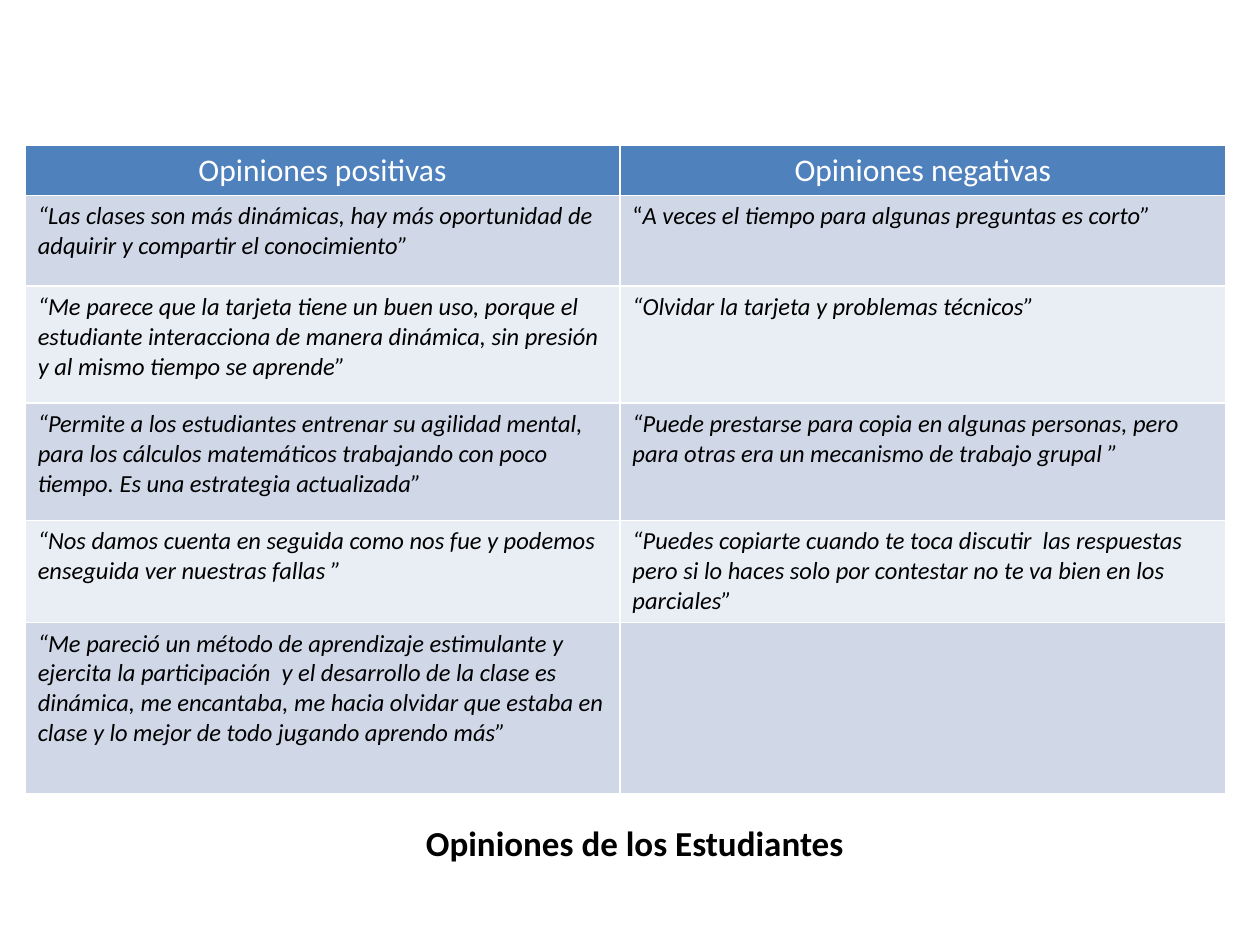
from pptx import Presentation
from pptx import util as u
from pptx.dml.color import RGBColor
from pptx.enum import text

BLACK = RGBColor(0x00, 0x00, 0x00)
WHITE = RGBColor(0xFF, 0xFF, 0xFF)
HEADER_BLUE = RGBColor(0x4F, 0x81, 0xBD)
BANDS = [RGBColor(0xE9, 0xED, 0xF4), RGBColor(0xD0, 0xD8, 0xE8)]

HEADINGS = ("Opiniones positivas", "Opiniones negativas")
OPINIONS = [
    ("“Las clases son más dinámicas, hay más oportunidad de adquirir y compartir el conocimiento”",
     "“A veces el tiempo para algunas preguntas es corto”"),
    ("“Me parece que la tarjeta tiene un buen uso, porque el estudiante interacciona de manera "
     "dinámica, sin presión y al mismo tiempo se aprende”",
     "“Olvidar la tarjeta y problemas técnicos”"),
    ("“Permite a los estudiantes entrenar su agilidad mental, para los cálculos matemáticos "
     "trabajando con poco tiempo. Es una estrategia actualizada”",
     "“Puede prestarse para copia en algunas personas, pero para otras era un mecanismo de "
     "trabajo grupal ”"),
    ("“Nos damos cuenta en seguida como nos fue y podemos enseguida ver nuestras fallas ”",
     "“Puedes copiarte cuando te toca discutir  las respuestas pero si lo haces solo por "
     "contestar no te va bien en los parciales”"),
    ("“Me pareció un método de aprendizaje estimulante y ejercita la participación  y el "
     "desarrollo de la clase es dinámica, me encantaba, me hacia olvidar que estaba en clase y "
     "lo mejor de todo jugando aprendo más”", ""),
]
COLUMN_WIDTHS = [4.72, 4.81]
ROW_HEIGHTS = [0.39, 0.72, 0.93, 0.93, 0.81, 1.36]


class OpinionSlide:
    title_format = {"size": u.Pt(20), "bold": True, "italic": False}
    heading_format = {"size": u.Pt(18), "bold": False, "italic": False}
    opinion_format = {"size": u.Pt(14), "bold": False, "italic": True}

    def __init__(self, deck):
        self.slide = deck.slides.add_slide(deck.slide_layouts[6])

    def add_words(self, paragraph, words, style, color, align):
        paragraph.alignment = align
        run = paragraph.add_run()
        run.text = words
        for name, value in {"name": "Calibri", **style}.items():
            setattr(run.font, name, value)
        run.font.color.rgb = color

    def title(self, words, *box):
        frame = self.slide.shapes.add_textbox(*map(u.Inches, box)).text_frame
        frame.word_wrap = True
        frame.vertical_anchor = text.MSO_ANCHOR.BOTTOM
        self.add_words(frame.paragraphs[0], words, self.title_format, BLACK,
                       text.PP_ALIGN.CENTER)

    def cell(self, cell, words, fill, style, color, align):
        cell.fill.solid()
        cell.fill.fore_color.rgb = fill
        paragraph = cell.text_frame.paragraphs[0]
        if words.startswith("“A veces"):
            self.add_words(paragraph, words[0], {**style, "italic": False}, color, align)
            words = words[1:]
        if words:
            self.add_words(paragraph, words, style, color, align)

    def table(self, left, top):
        rows = [HEADINGS, *OPINIONS]
        table = self.slide.shapes.add_table(
            len(rows), len(HEADINGS), u.Inches(left), u.Inches(top),
            u.Inches(sum(COLUMN_WIDTHS)), u.Inches(sum(ROW_HEIGHTS))).table
        for column, width in zip(table.columns, COLUMN_WIDTHS):
            column.width = u.Inches(width)
        for index, (row, height, opinions) in enumerate(zip(table.rows, ROW_HEIGHTS, rows)):
            row.height = u.Inches(height)
            if index == 0:
                look = (HEADER_BLUE, self.heading_format, WHITE, text.PP_ALIGN.CENTER)
            else:
                look = (BANDS[index % 2], self.opinion_format, BLACK, text.PP_ALIGN.LEFT)
            for cell, words in zip(row.cells, opinions):
                self.cell(cell, words, *look)


def main():
    deck = Presentation()
    deck.slide_width, deck.slide_height = u.Inches(10), u.Inches(7.5)
    page = OpinionSlide(deck)
    page.title("Opiniones de los Estudiantes ", 0.98, 6.35, 8.18, 0.55)
    page.table(0.2, 1.15)
    deck.save("out.pptx")


if __name__ == "__main__":
    main()
